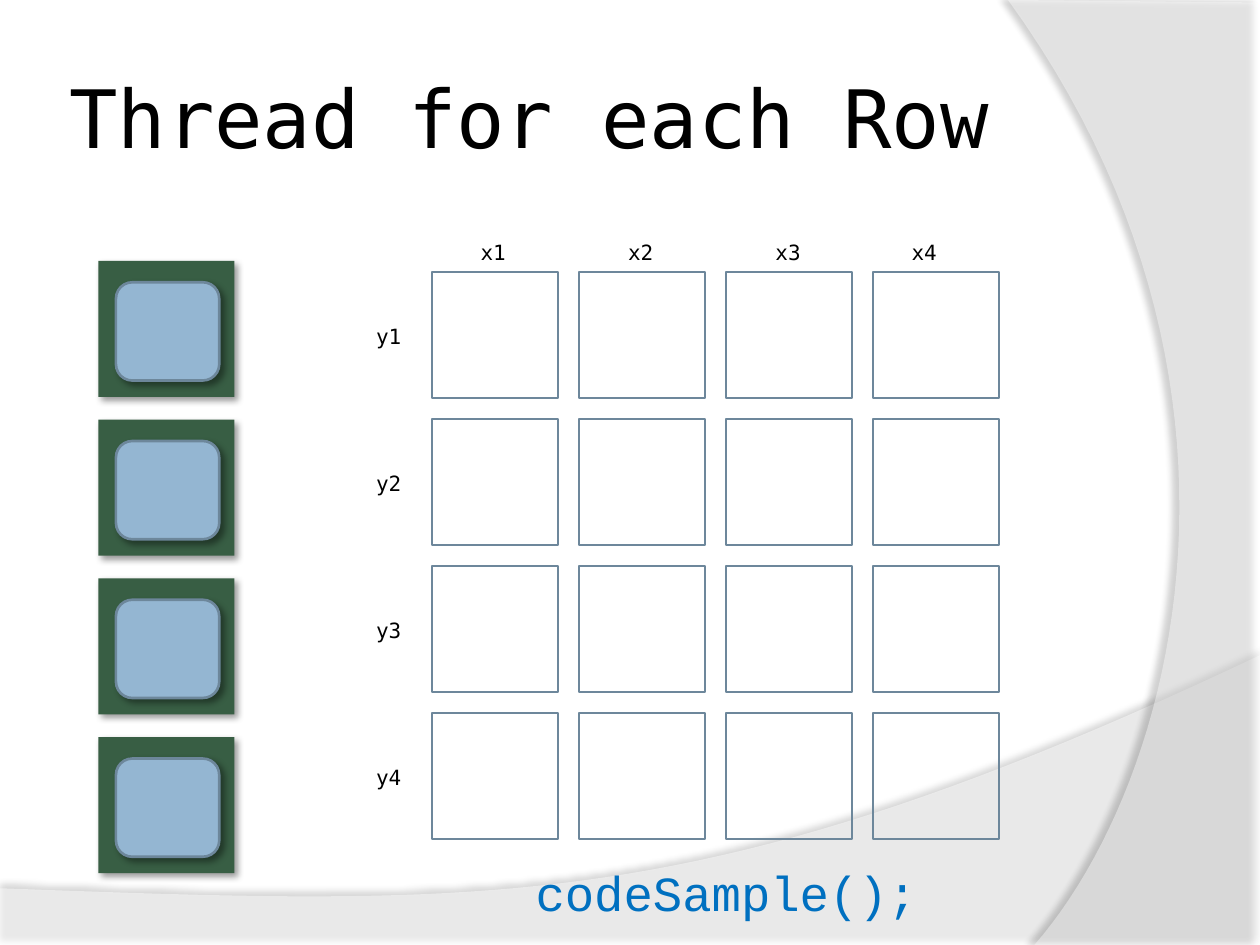
"""Build the slide that shows one thread working on each row of a grid."""
from dataclasses import dataclass
from typing import Optional

import pptx
import pptx.dml.color
import pptx.enum.shapes
import pptx.enum.text
import pptx.oxml.ns
import pptx.oxml.xmlchemy
import pptx.util
from lxml import etree

Inches = pptx.util.Inches
Pt = pptx.util.Pt
RGBColor = pptx.dml.color.RGBColor
MSO_SHAPE = pptx.enum.shapes.MSO_SHAPE
PP_ALIGN = pptx.enum.text.PP_ALIGN
MSO_ANCHOR = pptx.enum.text.MSO_ANCHOR
MSO_AUTO_SIZE = pptx.enum.text.MSO_AUTO_SIZE
qn = pptx.oxml.ns.qn

WHITE = RGBColor(0xFF, 0xFF, 0xFF)
BLACK = RGBColor(0x00, 0x00, 0x00)
GREEN = RGBColor(0x38, 0x5E, 0x44)
LIGHT_BLUE = RGBColor(0x94, 0xB6, 0xD2)
SLATE = RGBColor(0x6D, 0x87, 0x9B)
CODE_BLUE = RGBColor(0x00, 0x70, 0xC0)
MONO = "DejaVu Sans Mono"

COUNT = 4
GRID_LEFT, GRID_TOP, GRID_PITCH, CELL = 3.43, 2.16, 7 / 6, 1
CORE_TOP, CORE_PITCH = 2.07, 1.26
X_LABEL_LEFTS = (3.58, 4.75, 5.92, 7)

Point = tuple[float, float]


@dataclass
class Shadow:
    """Outer shadow: opacity in percent, lengths in points, angle in degrees."""
    opacity: int
    blur: float
    distance: float
    angle: int


@dataclass
class Swoosh:
    """Translucent outline of straight corners closed by a Bezier curve."""
    corners: list[Point]
    curve: tuple[Point, Point, Point]
    opacity: int
    shadow: Shadow


@dataclass
class Box:
    """Preset shape with its place in inches and its colours."""
    kind: MSO_SHAPE
    left: float
    top: float
    width: float
    height: float
    fill: Optional[RGBColor] = None
    line: Optional[RGBColor] = None
    shadow: Optional[Shadow] = None


@dataclass
class Label:
    """One line of text with its place in inches and its format."""
    text: str
    left: float
    top: float
    width: float = 0.67
    height: float = 0.3
    size: int = 12
    font: str = MONO
    color: RGBColor = BLACK
    align: PP_ALIGN = PP_ALIGN.CENTER


CORE_SHADOW = Shadow(40, 4, 3, 45)
SWOOSHES = [
    Swoosh([(0, 7.05), (0, 7.51), (10, 7.51), (10, 5.2)],
           ((5.59, 7.29), (3.91, 7.19), (0, 7.05)), 45, Shadow(35, 4, 3.5, 270)),
    Swoosh([(10, 0.02), (10, 7.5), (8.21, 7.5)],
           ((9.35, 6.19), (10.18, 3), (8, 0)), 40, Shadow(45, 4, 4, 180)),
]


def add_alpha(color, opacity: int) -> None:
    """Give a colour element an opacity in percent."""
    etree.SubElement(color, qn("a:alpha"), val=str(opacity * 1000))


def set_shadow(sp, shadow: Optional[Shadow]) -> None:
    """Replace the theme shadow by the given one or by none."""
    sp.shadow.inherit = False
    if shadow is None:
        return
    effects = sp._element.spPr.find(qn("a:effectLst"))
    outer = etree.SubElement(
        effects, qn("a:outerShdw"), blurRad=str(Pt(shadow.blur)),
        dist=str(Pt(shadow.distance)), dir=str(shadow.angle * 60000),
        algn="ctr", rotWithShape="0")
    color = etree.SubElement(outer, qn("a:srgbClr"), val=str(BLACK))
    add_alpha(color, shadow.opacity)


def bezier(start: Point, curve: tuple[Point, Point, Point], steps: int = 48) -> list[Point]:
    """Return points along a cubic curve, without its start."""
    points = (start, *curve)
    result = []
    for i in range(1, steps + 1):
        t = i / steps
        weights = ((1 - t) ** 3, 3 * t * (1 - t) ** 2, 3 * t * t * (1 - t), t ** 3)
        result.append(tuple(sum(w * p[axis] for w, p in zip(weights, points))
                            for axis in (0, 1)))
    return result


def add_swoosh(s, swoosh: Swoosh) -> None:
    """Draw one translucent background shape."""
    outline = swoosh.corners + bezier(swoosh.corners[-1], swoosh.curve)
    start, *rest = [(Inches(x), Inches(y)) for x, y in outline]
    builder = s.shapes.build_freeform(*start)
    builder.add_line_segments(rest, close=True)
    sp = builder.convert_to_shape()
    sp.fill.solid()
    sp.fill.fore_color.rgb = WHITE
    add_alpha(sp._element.spPr.find(qn("a:solidFill")).find(qn("a:srgbClr")), swoosh.opacity)
    sp.line.fill.background()
    set_shadow(sp, swoosh.shadow)


def add_box(s, box: Box) -> None:
    """Draw one preset shape."""
    sp = s.shapes.add_shape(box.kind, Inches(box.left), Inches(box.top),
                            Inches(box.width), Inches(box.height))
    if box.fill is None:
        sp.fill.background()
    else:
        sp.fill.solid()
        sp.fill.fore_color.rgb = box.fill
    if box.line is None:
        sp.line.fill.background()
    else:
        sp.line.color.rgb = box.line
        sp.line.width = Pt(1.5)
    set_shadow(sp, box.shadow)


def add_label(s, label: Label):
    """Draw one line of text and return its text frame."""
    sp = s.shapes.add_textbox(Inches(label.left), Inches(label.top),
                              Inches(label.width), Inches(label.height))
    tf = sp.text_frame
    tf.word_wrap = True
    tf.auto_size = MSO_AUTO_SIZE.SHAPE_TO_FIT_TEXT
    p = tf.paragraphs[0]
    p.text = label.text
    p.alignment = label.align
    r = p.runs[0]
    r.font.size = Pt(label.size)
    r.font.name = label.font
    r.font.color.rgb = label.color
    return tf


def add_title(s, text: str) -> None:
    """Draw the slide title."""
    tf = add_label(s, Label(text, 0.5, 0.3, 8.17, 1.25, 46, align=PP_ALIGN.LEFT))
    tf.auto_size = MSO_AUTO_SIZE.NONE
    tf.vertical_anchor = MSO_ANCHOR.MIDDLE
    tf.margin_left = tf.margin_right = Inches(0.05)


def main() -> None:
    """Build and save the slide."""
    prs = pptx.Presentation()
    prs.slide_width, prs.slide_height = Inches(10), Inches(7.5)
    s = prs.slides.add_slide(prs.slide_layouts[6])
    for swoosh in SWOOSHES:
        add_swoosh(s, swoosh)
    add_title(s, "Thread for each Row")
    for row in range(COUNT):
        for col in range(COUNT):
            add_box(s, Box(MSO_SHAPE.RECTANGLE, GRID_LEFT + col * GRID_PITCH,
                           GRID_TOP + row * GRID_PITCH, CELL, CELL, line=SLATE))
    for row in range(COUNT):
        top = CORE_TOP + row * CORE_PITCH
        add_box(s, Box(MSO_SHAPE.RECTANGLE, 0.78, top, 1.08, 1.08, GREEN, shadow=CORE_SHADOW))
        add_box(s, Box(MSO_SHAPE.ROUNDED_RECTANGLE, 0.92, top + 0.17, 0.82, 0.78,
                       LIGHT_BLUE, SLATE, CORE_SHADOW))
    for i, left in enumerate(X_LABEL_LEFTS):
        add_label(s, Label(f"x{i + 1}", left, 1.85))
    for i in range(COUNT):
        add_label(s, Label(f"y{i + 1}", 2.75, 2.52 + i * GRID_PITCH))
    add_label(s, Label("codeSample();", 2.89, 6.8, 5.75, 0.57, 28, "Courier New", CODE_BLUE))
    prs.save("out.pptx")


if __name__ == "__main__":
    main()
